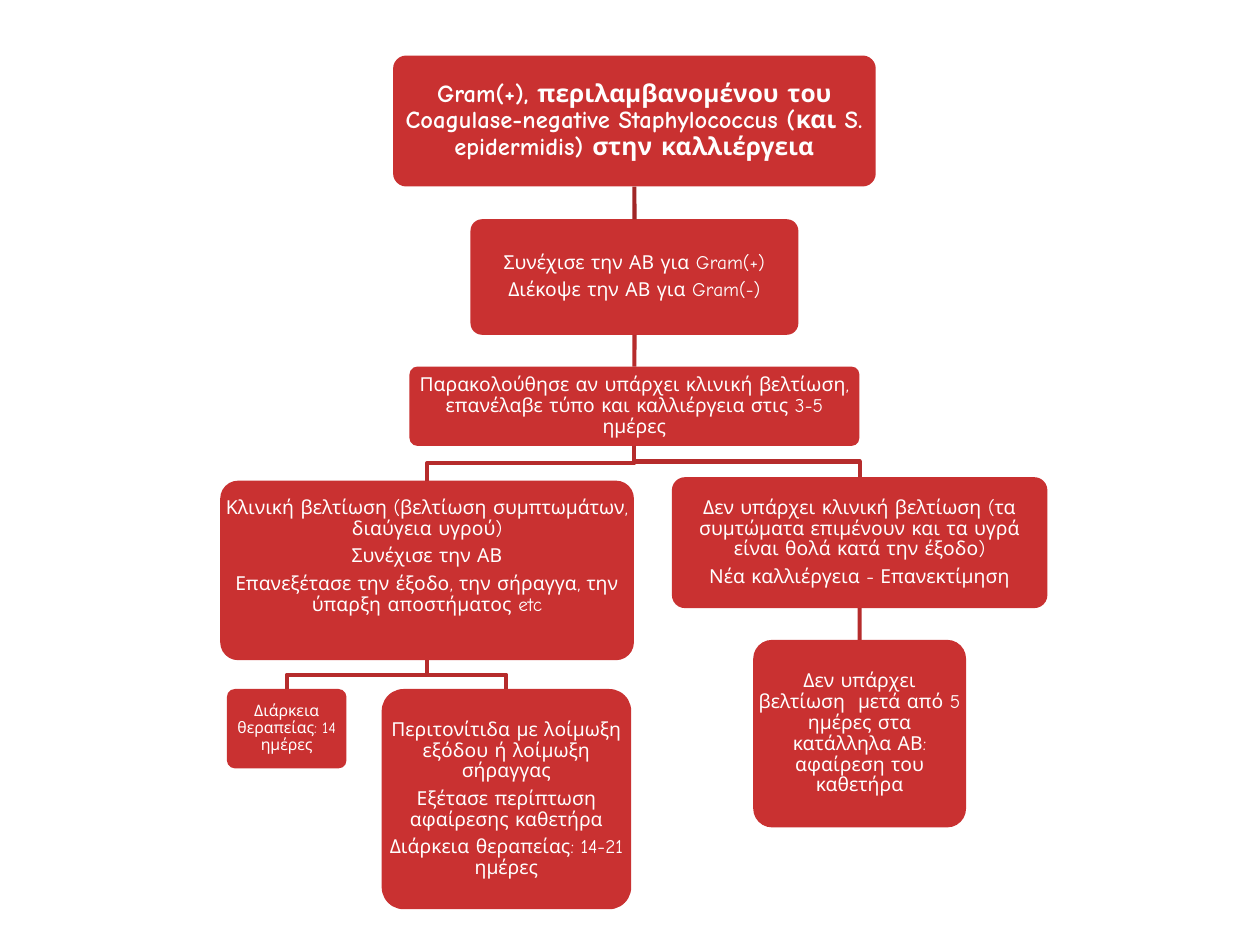
from lxml import etree
from pptx import Presentation
from pptx.enum import shapes, text
from pptx.dml.color import RGBColor
from pptx.oxml.ns import qn
from pptx.util import Cm, Pt

COLORS = {"box": "C93131", "root_line": "A12727", "line": "B62C2C", "text": "FFFFFF"}
FONT = "Comic Neue"
ROUNDING = 0.1
TOP, BOTTOM = 0, 2

# centre x, top, width, height in cm; "format" holds arguments of write_text
BOXES = {
    "culture": dict(
        place=(12.79, 1.12, 9.73, 2.64), parent=None,
        lines=["Gram(+), περιλαμβανομένου του Coagulase-negative Staphylococcus "
               "(και S. epidermidis) στην καλλιέργεια"],
        format=dict(size=14, bold=True, margin=0.15)),
    "antibiotics": dict(
        place=(12.79, 4.42, 6.61, 2.33), parent="culture",
        lines=["Συνέχισε την ΑΒ για Gram(+)", "Διέκοψε την ΑΒ για Gram(-)"]),
    "follow_up": dict(
        place=(12.79, 7.39, 9.07, 1.6), parent="antibiotics",
        lines=["Παρακολούθησε αν υπάρχει κλινική βελτίωση, επανέλαβε τύπο "
               "και καλλιέργεια στις 3-5 ημέρες"]),
    "improved": dict(
        place=(8.61, 9.69, 8.34, 3.62), parent="follow_up",
        lines=["Κλινική βελτίωση (βελτίωση συμπτωμάτων, διαύγεια υγρού)",
               "Συνέχισε την ΑΒ",
               "Επανεξέτασε την έξοδο, την σήραγγα, την ύπαρξη αποστήματος etc"],
        format=dict(extra_bottom=0.56)),
    "duration": dict(
        place=(5.78, 13.89, 2.41, 1.6), parent="improved",
        lines=["Διάρκεια θεραπείας: 14 ημέρες"],
        format=dict(size=9)),
    "peritonitis": dict(
        place=(10.21, 13.89, 5.03, 4.44), parent="improved",
        lines=["Περιτονίτιδα με λοίμωξη εξόδου ή λοίμωξη σήραγγας",
               "Εξέτασε περίπτωση αφαίρεσης καθετήρα",
               "Διάρκεια θεραπείας: 14-21 ημέρες"]),
    "not_improved": dict(
        place=(17.33, 9.62, 7.57, 2.64), parent="follow_up",
        lines=["Δεν υπάρχει κλινική βελτίωση (τα συμτώματα επιμένουν και τα υγρά "
               "είναι θολά κατά την έξοδο)",
               "Νέα καλλιέργεια - Επανεκτίμηση"]),
    "removal": dict(
        place=(17.33, 12.9, 4.29, 3.78), parent="not_improved",
        lines=["Δεν υπάρχει βελτίωση  μετά από 5 ημέρες στα κατάλληλα ΑΒ: "
               "αφαίρεση του καθετήρα"]),
}


def rgb(name):
    return RGBColor.from_string(COLORS[name])


def write_text(shape, lines, size=11, bold=False, margin=0.1, extra_bottom=0):
    """Centre the lines; the margin is measured from the box edge, in cm."""
    frame = shape.text_frame
    frame.word_wrap = True
    frame.vertical_anchor = text.MSO_ANCHOR.MIDDLE
    # A rounded rectangle already insets its text by 0.29 of the corner radius.
    corner = 0.29 * ROUNDING * min(shape.width, shape.height)
    inset = max(0, int(Cm(margin) - corner))
    frame.margin_left = frame.margin_right = frame.margin_top = inset
    frame.margin_bottom = inset + Cm(extra_bottom)
    for index, line in enumerate(lines):
        paragraph = frame.paragraphs[0] if index == 0 else frame.add_paragraph()
        paragraph.alignment = text.PP_ALIGN.CENTER
        paragraph.line_spacing = 0.9
        paragraph.space_after = Pt(0.35 * size)
        run = paragraph.add_run()
        run.text = line
        run.font.name = FONT
        run.font.size = Pt(size)
        run.font.bold = bold
        run.font.color.rgb = rgb("text")


def add_box(slide, place, lines, **text_format):
    center, top, width, height = place
    shape = slide.shapes.add_shape(
        shapes.MSO_SHAPE.ROUNDED_RECTANGLE,
        Cm(center - width / 2), Cm(top), Cm(width), Cm(height))
    shape.adjustments[0] = ROUNDING
    shape.shadow.inherit = False
    shape.fill.solid()
    shape.fill.fore_color.rgb = rgb("box")
    shape.line.fill.background()
    write_text(shape, lines, **text_format)
    return shape


def add_link(slide, parent, child, parent_place, child_place, color):
    """Straight connector within a column, bent line halfway down otherwise."""
    start_x, start_y = parent_place[0], parent_place[1] + parent_place[3]
    end_x, end_y = child_place[:2]
    if start_x == end_x:
        link = slide.shapes.add_connector(
            shapes.MSO_CONNECTOR.STRAIGHT,
            Cm(start_x), Cm(start_y), Cm(end_x), Cm(end_y))
        link.begin_connect(parent, BOTTOM)
        link.end_connect(child, TOP)
    else:
        middle = (start_y + end_y) / 2
        builder = slide.shapes.build_freeform(Cm(start_x), Cm(start_y))
        builder.add_line_segments(
            [(Cm(start_x), Cm(middle)), (Cm(end_x), Cm(middle)), (Cm(end_x), Cm(end_y))],
            close=False)
        link = builder.convert_to_shape()
        link.fill.background()
    link.line.color.rgb = rgb(color)
    link.line.width = Pt(2.36)
    etree.SubElement(link._element.spPr, qn("a:effectLst"))


def main():
    presentation = Presentation()
    presentation.slide_width, presentation.slide_height = Cm(25.4), Cm(19.05)
    slide = presentation.slides.add_slide(presentation.slide_layouts[6])
    drawn = {}
    for name, box in BOXES.items():
        drawn[name] = add_box(slide, box["place"], box["lines"], **box.get("format", {}))
    for name, box in BOXES.items():
        parent = box["parent"]
        if parent:
            color = "root_line" if parent == "culture" else "line"
            add_link(slide, drawn[parent], drawn[name],
                     BOXES[parent]["place"], box["place"], color)
    presentation.save("out.pptx")


if __name__ == "__main__":
    main()
